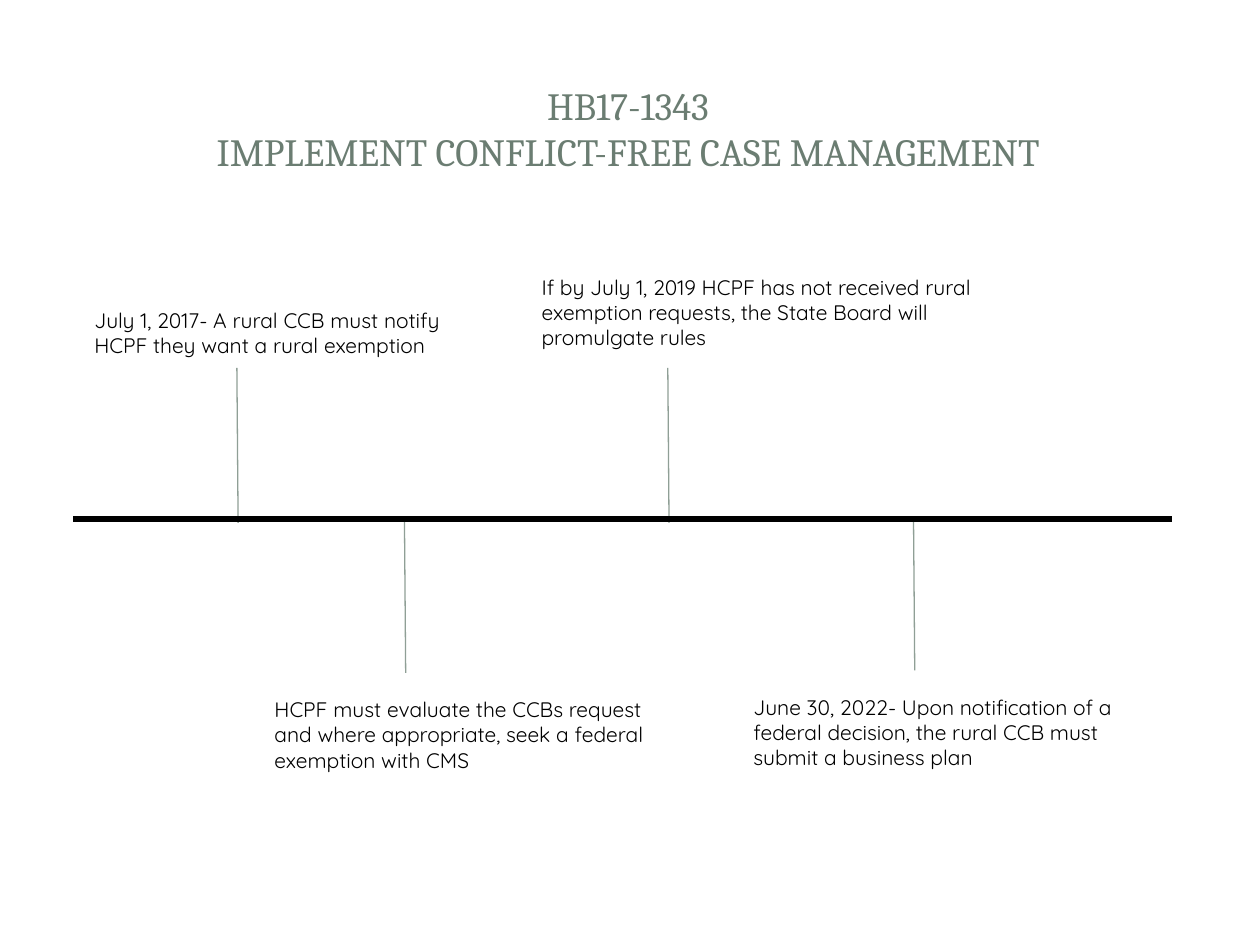
"""Build the HB17-1343 conflict-free case management timeline slide."""
from lxml.etree import SubElement
from pptx import Presentation
from pptx.dml.color import RGBColor
from pptx.enum.shapes import MSO_CONNECTOR
from pptx.enum.text import MSO_ANCHOR, MSO_AUTO_SIZE, PP_ALIGN
from pptx.oxml.ns import qn
from pptx.util import Inches, Pt

BLACK = RGBColor(0x00, 0x00, 0x00)
TITLE_GREEN = RGBColor(0x6B, 0x7D, 0x72)
MARKER_GREEN = RGBColor(0x8F, 0x9F, 0x96)

deck = Presentation()
deck.slide_width, deck.slide_height = Inches(10), Inches(7.5)
slide = deck.slides.add_slide(deck.slide_layouts[6])


def add_text(text, left, top, width, height, *, font="Quicksand", size=12, color=BLACK,
             align=PP_ALIGN.LEFT, anchor=MSO_ANCHOR.TOP, fit=MSO_AUTO_SIZE.SHAPE_TO_FIT_TEXT):
    box = slide.shapes.add_textbox(Inches(left), Inches(top), Inches(width), Inches(height))
    frame = box.text_frame
    frame.word_wrap = True
    frame.auto_size = fit
    frame.vertical_anchor = anchor
    paragraph = frame.paragraphs[0]
    paragraph.text = text
    paragraph.alignment = align
    paragraph.font.name = font
    for run in paragraph.runs:
        run.font.name = font
        run.font.size = Pt(size)
        run.font.color.rgb = color


def add_line(x1, y1, x2, y2, color, width):
    line = slide.shapes.add_connector(
        MSO_CONNECTOR.STRAIGHT, Inches(x1), Inches(y1), Inches(x2), Inches(y2))
    line.line.color.rgb = color
    line.line.width = Pt(width)
    SubElement(line._element.spPr, qn("a:effectLst"))


add_text("HB17-1343\vIMPLEMENT CONFLICT-FREE CASE MANAGEMENT", 0.47, 0.45, 9.03, 1.14,
         font="Cambria", size=22, color=TITLE_GREEN, align=PP_ALIGN.CENTER,
         anchor=MSO_ANCHOR.MIDDLE, fit=MSO_AUTO_SIZE.NONE)

milestones = [
    ("July 1, 2017- A rural CCB must notify HCPF they want a rural exemption",
     (0.65, 2.39, 3.23, 0.5), (1.89, 4.15, 2.92)),
    ("HCPF must evaluate the CCBs request and where appropriate, "
     "seek a federal exemption with CMS",
     (2.08, 5.48, 3.21, 0.71), (3.22, 5.34, 4.11)),
    ("If by July 1, 2019 HCPF has not received rural exemption requests, "
     "the State Board will promulgate rules",
     (4.2, 2.13, 3.79, 0.71), (5.31, 4.15, 2.92)),
    ("June 30, 2022- Upon notification of a federal decision, "
     "the rural CCB must submit a business plan",
     (5.88, 5.46, 3.21, 0.71), (7.26, 5.32, 4.1)),
]
for wording, place, (marker_x, marker_bottom, marker_top) in milestones:
    add_line(marker_x, marker_bottom, marker_x - 0.01, marker_top, MARKER_GREEN, 0.75)
    add_text(wording, *place)

add_line(0.58, 4.12, 9.3, 4.12, BLACK, 3)

deck.save("out.pptx")
